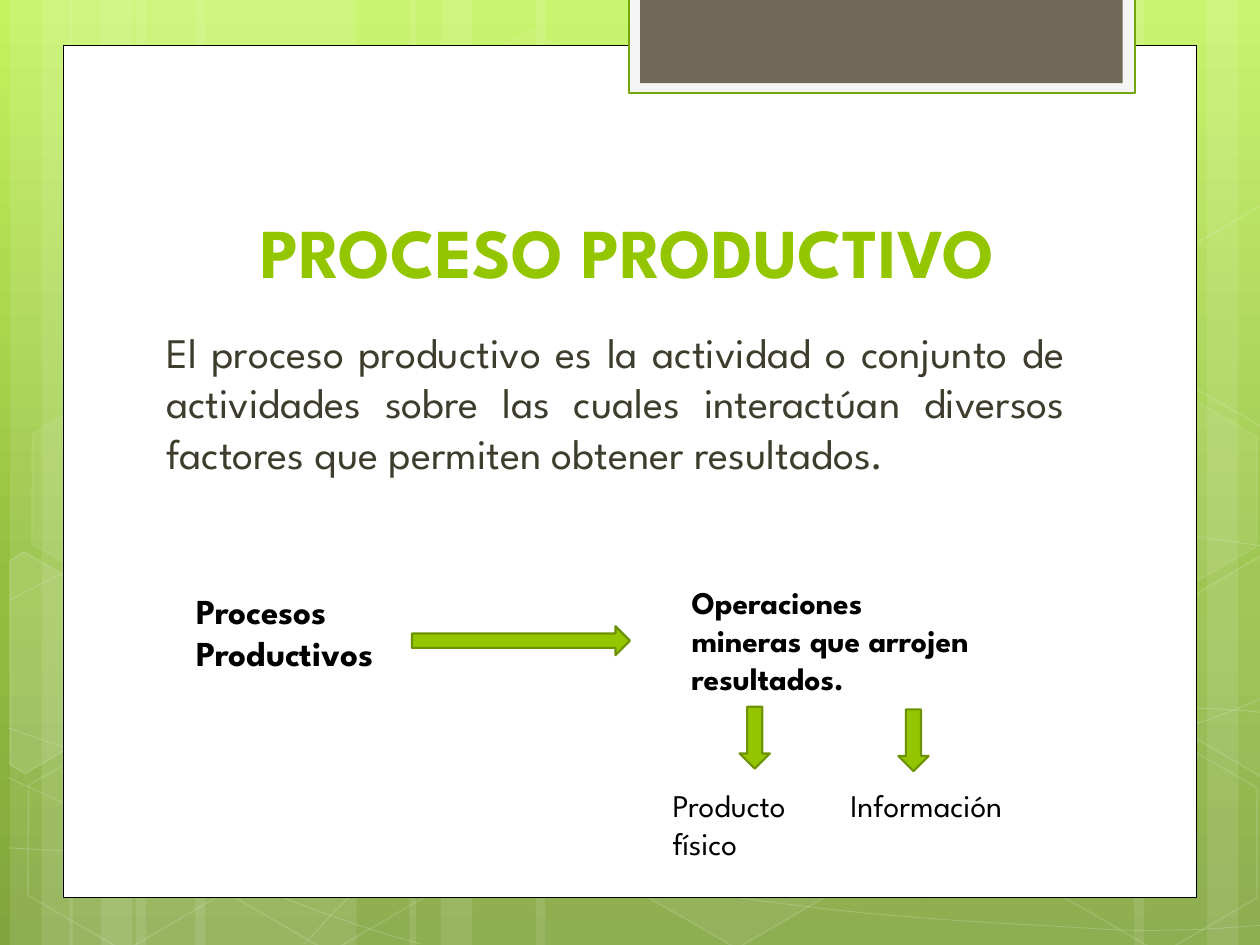
from pptx import Presentation
from pptx.dml.color import RGBColor
from pptx.enum.shapes import MSO_SHAPE
from pptx.enum.text import MSO_ANCHOR, PP_ALIGN
from pptx.oxml import parse_xml
from pptx.oxml.ns import nsdecls, qn
from pptx.util import Inches, Pt
from lxml import etree

RECT, HEX = MSO_SHAPE.RECTANGLE, MSO_SHAPE.HEXAGON
RIGHT, DOWN = MSO_SHAPE.RIGHT_ARROW, MSO_SHAPE.DOWN_ARROW
LEFT, CENTER, JUSTIFY = PP_ALIGN.LEFT, PP_ALIGN.CENTER, PP_ALIGN.JUSTIFY
TOP, BOTTOM = MSO_ANCHOR.TOP, MSO_ANCHOR.BOTTOM
FONT = "League Spartan"
WHITE, BLACK, GREEN, DARK = "FFFFFF", "000000", "94C600", "6D9200"

# Content: place, words, size, bold, colour, alignment, anchor
TEXTS = [
    ((1.14, 1.12, 7.68, 1.25), "PROCESO PRODUCTIVO", 40, True, GREEN, CENTER, BOTTOM),
    ((1.14, 2.54, 7.41, 3.84),
     "El proceso productivo es la actividad o conjunto de actividades sobre las "
     "cuales interactúan diversos factores que permiten obtener resultados.",
     24, False, "3E3D2D", JUSTIFY, TOP),
    ((1.46, 4.63, 1.81, 0.77), "Procesos Productivos", 20, True, BLACK, LEFT, TOP),
    ((5.39, 4.58, 2.44, 1.01), "Operaciones mineras que arrojen resultados.",
     18, True, BLACK, LEFT, TOP),
    ((5.24, 6.19, 1.38, 0.71), "Producto físico", 18, False, BLACK, LEFT, TOP),
    ((6.65, 6.19, 1.81, 0.4), "Información", 18, False, BLACK, LEFT, TOP),
]
ARROWS = [
    (RIGHT, (3.27, 4.97, 1.73, 0.23)),
    (DOWN, (5.87, 5.61, 0.24, 0.49)),
    (DOWN, (7.13, 5.63, 0.24, 0.49)),
]

# Backdrop: stripes (left, width)
GRADE = [(0, "C3F35F"), (62, "93BF3F"), (100, "81A53E")]
STRIPES = [
    (1.08, 1.75), (0.08, 0.5), (0.33, 0.83), (1.55, 1.75), (0.55, 0.5), (0.8, 0.83),
    (7.33, 1.75), (9.58, 0.5), (9, 0.83), (4.25, 3.08), (3.25, 0.5), (3.5, 0.83),
]
# Each curve: start point, then two handles and an end point per piece;
# a straight piece has None for its handles
CURVES = [
    [(0.07, 6.73), (0.61, 6.76), (1.15, 6.79), (1.9, 6.78), (2.65, 6.77), (3.58, 6.75),
     (4.58, 6.65), (5.58, 6.55), (7, 6.36), (7.92, 6.17), (8.83, 5.98), (9.77, 5.68),
     (10.07, 5.51)],
    [(0.07, 4.77), (0.36, 4.61), (0.65, 4.46), (1.21, 4.31), (1.78, 4.16), (2.59, 3.94),
     (3.47, 3.87), (4.36, 3.8), (5.44, 3.79), (6.54, 3.87), (7.64, 3.95), (9.47, 4.26),
     (10.07, 4.34)],
    [(0.06, 6.17), (1.27, 6.72), (2.47, 7.27), (3.34, 7.49)],
    [(0.07, 5.78), (0.38, 5.89), (0.7, 6), (1.28, 6.16), (1.86, 6.31), (2.73, 6.56),
     (3.57, 6.73), (4.4, 6.9), (5.45, 7.08), (6.28, 7.18), (7.11, 7.29), (8, 7.33),
     (8.53, 7.36), (9.05, 7.4), (9.19, 7.38), (9.45, 7.38), (9.71, 7.37), (9.89, 7.35),
     (10.07, 7.34)],
    [(2.42, 7.49), (2.6, 7.29), (2.78, 7.09), (3.02, 6.91), (3.26, 6.73), (3.6, 6.53),
     (3.88, 6.39), (4.16, 6.25), (4.33, 6.19), (4.7, 6.09), (5.06, 5.99), (5.73, 5.85),
     (6.08, 5.78), (6.44, 5.71), (6.49, 5.71), (6.8, 5.69), (7.11, 5.66), (7.6, 5.63),
     (7.94, 5.62), (8.29, 5.61), (8.86, 5.62), (8.86, 5.62), None, None,
     (9.53, 5.62), (9.71, 5.63), (9.88, 5.64), (9.97, 5.65), (10.06, 5.66),
     (10.03, 5.65), (10.06, 5.66)],
]
# Hexagons: left, top, fill opacity, line opacity
HEXES = [
    (3.34, 0.36, 4, 8), (4.97, 5.89, 6, 12), (0.11, 5.91, 0, 12), (0.14, 3.12, 7, 8),
    (1.74, 5.92, 0, 12), (7.53, 4.53, 10, 12), (8.34, 5.93, 0, 12), (8.34, 3.14, 7, 8),
]
# Hexagons cut by the slide edge: corners, fill opacity
CUT = [
    ([(0.08, 4.45), (0.19, 4.38), (0.96, 4.82), (0.95, 5.7), (0.2, 6.14), (0.08, 6.07)], 10),
    ([(9.26, 4.85), (10.01, 4.41), (10.09, 4.46), (10.09, 6.13), (10.02, 6.17),
      (9.26, 5.73)], 4),
    ([(9.26, 2.07), (10.01, 1.63), (10.1, 1.68), (10.09, 3.35), (10.02, 3.39),
      (9.26, 2.95)], 0),
]
# Panels: place, fill, line, line width
PANELS = [
    ((0.5, 0.36, 9, 6.76), WHITE, BLACK, 0.5),
    ((4.99, -0.02, 4.02, 0.76), "F5F5F5", "74A510", 1.25),
    ((5.08, -0.02, 3.83, 0.68), "71685A", None, 0),
]


def paint(fill, color, alpha=100):
    if not color or not alpha:
        fill.background()
        return
    fill.solid()
    fill.fore_color.rgb = RGBColor.from_string(color)
    if alpha < 100:
        tone = fill._xPr.find(qn("a:solidFill"))[0]
        etree.SubElement(tone, qn("a:alpha")).set("val", str(alpha * 1000))


def style(shape, fill, line=None, width=0, see=100, edge=100):
    shape.shadow.inherit = False
    paint(shape.fill, fill, see)
    paint(shape.line.fill, line, edge)
    if line:
        shape.line.width = Pt(width)


def add(kind, at):
    return shapes.add_shape(kind, *map(Inches, at))


def draw(points, close):
    spots = [(Inches(x), Inches(y)) for x, y in points]
    pen = shapes.build_freeform(*spots[0])
    pen.add_line_segments(spots[1:], close=close)
    return pen.convert_to_shape()


def bend(points):
    """Draw the end points, then turn each piece that has handles into a Bezier."""
    shape = draw(points[::3], False)
    lines = list(shape._element.iter(qn("a:lnTo")))
    for line, one, two in zip(lines, points[1::3], points[2::3]):
        if one is None:
            continue
        cubic = etree.Element(qn("a:cubicBezTo"))
        for x, y in (one, two):
            spot = etree.SubElement(cubic, qn("a:pt"))
            spot.set("x", str(Inches(x) - shape.left))
            spot.set("y", str(Inches(y) - shape.top))
        cubic.append(line[0])
        line.getparent().replace(line, cubic)
    return shape


prs = Presentation()
prs.slide_width, prs.slide_height = Inches(10), Inches(7.5)
slide = prs.slides.add_slide(prs.slide_layouts[6])
shapes = slide.shapes

# Background gradient, top to bottom
stops = "".join(f'<a:gs pos="{p * 1000}"><a:srgbClr val="{c}"/></a:gs>' for p, c in GRADE)
slide.element.cSld.insert(0, parse_xml(
    f'<p:bg {nsdecls("p", "a")}><p:bgPr><a:gradFill><a:gsLst>{stops}</a:gsLst>'
    '<a:lin ang="5400000" scaled="0"/></a:gradFill><a:effectLst/></p:bgPr></p:bg>'))

# Stripes, curves and hexagons
for left, width in STRIPES:
    style(add(RECT, (left, 0, width, 7.5)), WHITE, see=10)
for curve in CURVES:
    style(bend(curve), None, WHITE, 0.5, edge=20)
for left, top, see, edge in HEXES:
    cell = add(HEX, (left, top, 1.75, 1.52))
    cell.adjustments[0] = 0.285
    cell.rotation = 30
    style(cell, WHITE, WHITE, 1, see, edge)
for points, see in CUT:
    style(draw(points, True), WHITE, WHITE, 1, see, 12)

# Panels and arrows
for at, fill, line, width in PANELS:
    style(add(RECT, at), fill, line, width)
for kind, at in ARROWS:
    style(add(kind, at), GREEN, DARK, 1.25)

# Texts
for at, words, size, bold, color, align, anchor in TEXTS:
    frame = shapes.add_textbox(*map(Inches, at)).text_frame
    frame.word_wrap = True
    frame.vertical_anchor = anchor
    frame.text = words
    para = frame.paragraphs[0]
    para.alignment = align
    if align == JUSTIFY:
        para.space_before = Pt(4.8)
        para._p.get_or_add_pPr().set("marL", str(Inches(0.08)))
    font = para.runs[0].font
    font.name, font.size, font.bold = FONT, Pt(size), bold
    font.color.rgb = RGBColor.from_string(color)

prs.save("out.pptx")
